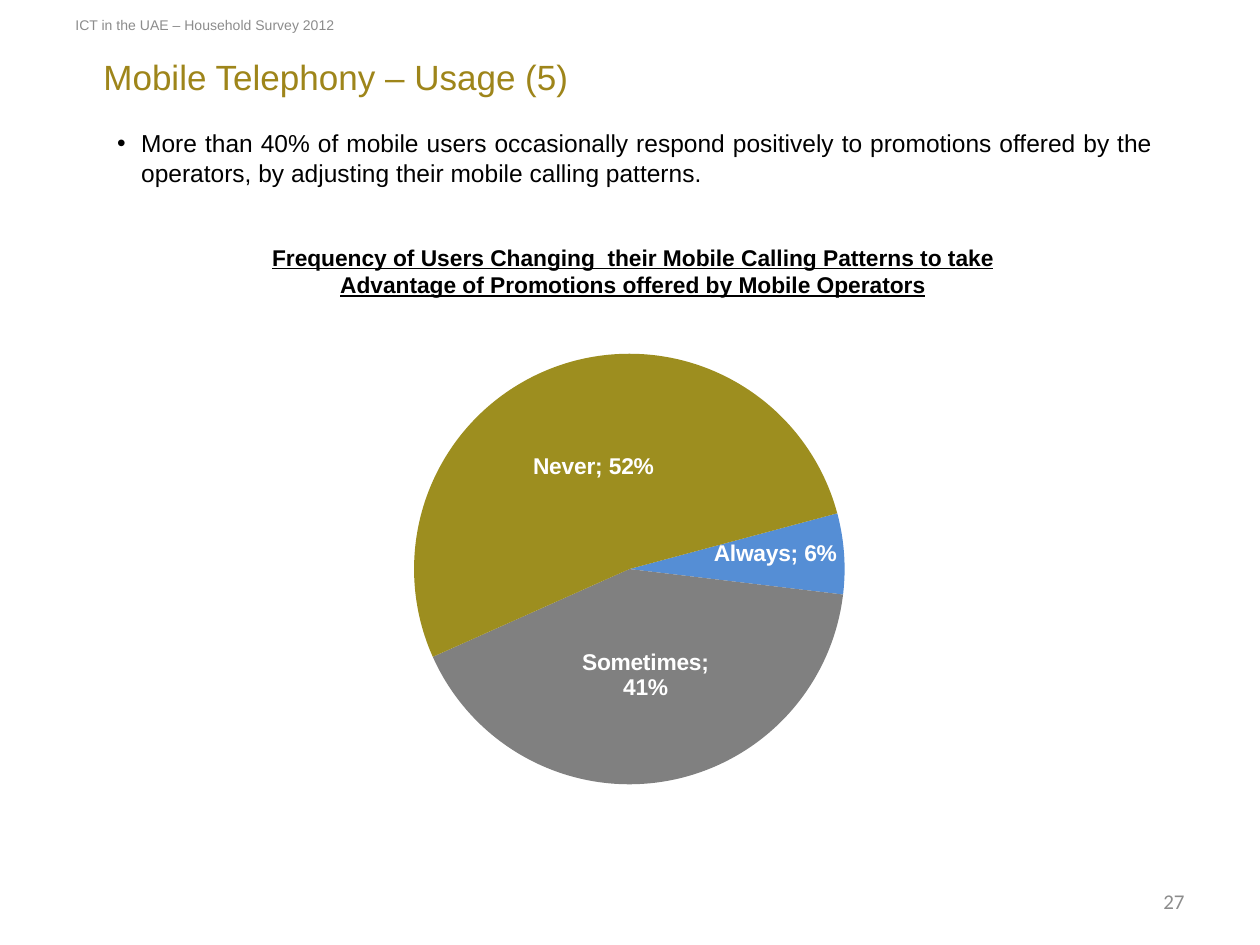
from copy import deepcopy
from dataclasses import dataclass
from lxml.etree import SubElement
from pptx import Presentation
from pptx.chart.data import CategoryChartData as Data
from pptx.dml.color import RGBColor as RGB
from pptx.enum.chart import XL_CHART_TYPE as Kind, XL_LABEL_POSITION as Spot
from pptx.enum.text import MSO_ANCHOR as Anchor, PP_ALIGN as Align
from pptx.oxml import parse_xml
from pptx.oxml.ns import nsdecls, qn
from pptx.util import Inches, Pt

WIDE, HIGH = Inches(10), Inches(7.5)


@dataclass(frozen=True)
class Theme:
    face: str = "Arial"
    plain: str = "Calibri"
    gold: str = "9E851A"
    gray: str = "8C8C8C"
    ink: str = "000000"
    white: str = "FFFFFF"
    slices: tuple = ("558ED5", "808080", "9D8E1F")
    title: int = 20
    body: int = 14
    label: int = 13
    page: int = 12
    note: int = 8


LOOK = Theme()


def share(x, y, w, h):
    return [int(WIDE * x), int(HIGH * y), int(WIDE * w), int(HIGH * h)]


def style(font, size, color, face=LOOK.face, bold=False, under=False):
    font.name, font.size = face, Pt(size)
    font.bold, font.underline = bold, under
    font.color.rgb = RGB.from_string(color)


def write(shape, area, text, size, color, align=Align.LEFT,
          anchor=Anchor.MIDDLE, bullet=False, **kind):
    shape.left, shape.top, shape.width, shape.height = area
    frame = shape.text_frame
    frame.word_wrap, frame.vertical_anchor = True, anchor
    frame.text = text
    para = frame.paragraphs[0]
    para.alignment = align
    para.space_before = Pt(0)
    if bullet:
        props = para._p.get_or_add_pPr()
        props.set("marL", str(Inches(0.19)))
        props.set("indent", str(-Inches(0.19)))
        SubElement(props, qn("a:buChar")).set("char", "•")
    style(para.font, size, color, **kind)


def box(slide, area, *args, **kind):
    write(slide.shapes.add_textbox(*area), area, *args, **kind)


def place(chart, x, y, w, h):
    plot = chart._chartSpace.chart.plotArea
    for old in plot.findall(qn("c:layout")):
        plot.remove(old)
    sides = "".join(f'<c:{key} val="{val}"/>' for key, val in
                    zip("xywh", (x, y, w, h)))
    plot.insert(0, parse_xml(
        f'<c:layout {nsdecls("c")}><c:manualLayout>'
        '<c:layoutTarget val="inner"/><c:xMode val="edge"/>'
        f'<c:yMode val="edge"/>{sides}</c:manualLayout></c:layout>'))


def split(label):
    mark = parse_xml(f'<c:separator {nsdecls("c")}>; </c:separator>')
    label.find(qn("c:showBubbleSize")).addnext(mark)


def tag(row):
    tags = row.data_labels
    tags.show_value = tags.show_category_name = True
    tags.number_format, tags.number_format_is_linked = "0%", False
    tags.position = Spot.CENTER
    style(tags.font, LOOK.label, LOOK.white, bold=True)
    split(tags._element)

    edge = row.points[0].data_label
    style(edge.font, LOOK.label, LOOK.white, bold=True)
    edge.position = Spot.INSIDE_END
    item = tags._element.find(qn("c:dLbl"))
    item.find(qn("c:showCatName")).set("val", "1")
    form = deepcopy(tags._element.find(qn("c:numFmt")))
    item.find(qn("c:idx")).addnext(form)
    split(item)


def pie(slide, area, names, vals):
    data = Data(number_format="0%")
    data.categories = names
    data.add_series("Series 1", vals)
    chart = slide.shapes.add_chart(Kind.PIE, *area, data).chart
    chart.has_title = chart.has_legend = False
    style(chart.font, 18, LOOK.ink, LOOK.plain)
    plot = chart.plots[0]
    plot.vary_by_categories = True
    row = plot.series[0]
    for spot, color in enumerate(LOOK.slices):
        fill = row.points[spot].format.fill
        fill.solid()
        fill.fore_color.rgb = RGB.from_string(color)
    tag(row)
    root = chart._chartSpace.chart.plotArea.find(qn("c:pieChart"))
    for old in root.findall(qn("c:firstSliceAng")):
        root.remove(old)
    SubElement(root, qn("c:firstSliceAng")).set("val", "75")
    place(chart, 0.22, 0.03, 0.46, 0.89)


def main():
    deck = Presentation()
    deck.slide_width, deck.slide_height = WIDE, HIGH
    slide = deck.slides.add_slide(deck.slide_layouts[1])
    write(slide.shapes.title, share(0.072, 0.047, 0.809, 0.067),
          "Mobile Telephony – Usage (5)", LOOK.title, LOOK.gold)
    write(slide.placeholders[1], share(0.083, 0.129, 0.842, 0.076),
          "More than 40% of mobile users occasionally respond positively to "
          "promotions offered by the operators, by adjusting their mobile "
          "calling patterns.", LOOK.body, LOOK.ink, Align.JUSTIFY,
          Anchor.TOP, bullet=True)
    box(slide, share(0.05, 0, 0.525, 0.053),
        "ICT in the UAE – Household Survey 2012", LOOK.note, LOOK.gray)
    box(slide, share(0.717, 0.927, 0.233, 0.053), "27", LOOK.page,
        LOOK.gray, Align.RIGHT, face=LOOK.plain)
    box(slide, share(0.205, 0.251, 0.594, 0.072),
        "Frequency of Users Changing  their Mobile Calling Patterns to take "
        "Advantage of Promotions offered by Mobile Operators", LOOK.label,
        LOOK.ink, Align.CENTER, Anchor.TOP, bold=True, under=True)
    pie(slide, share(0.162, 0.359, 0.75, 0.512),
        ("Always", "Sometimes", "Never"), (0.06, 0.41, 0.52))
    deck.save("out.pptx")


if __name__ == "__main__":
    main()
